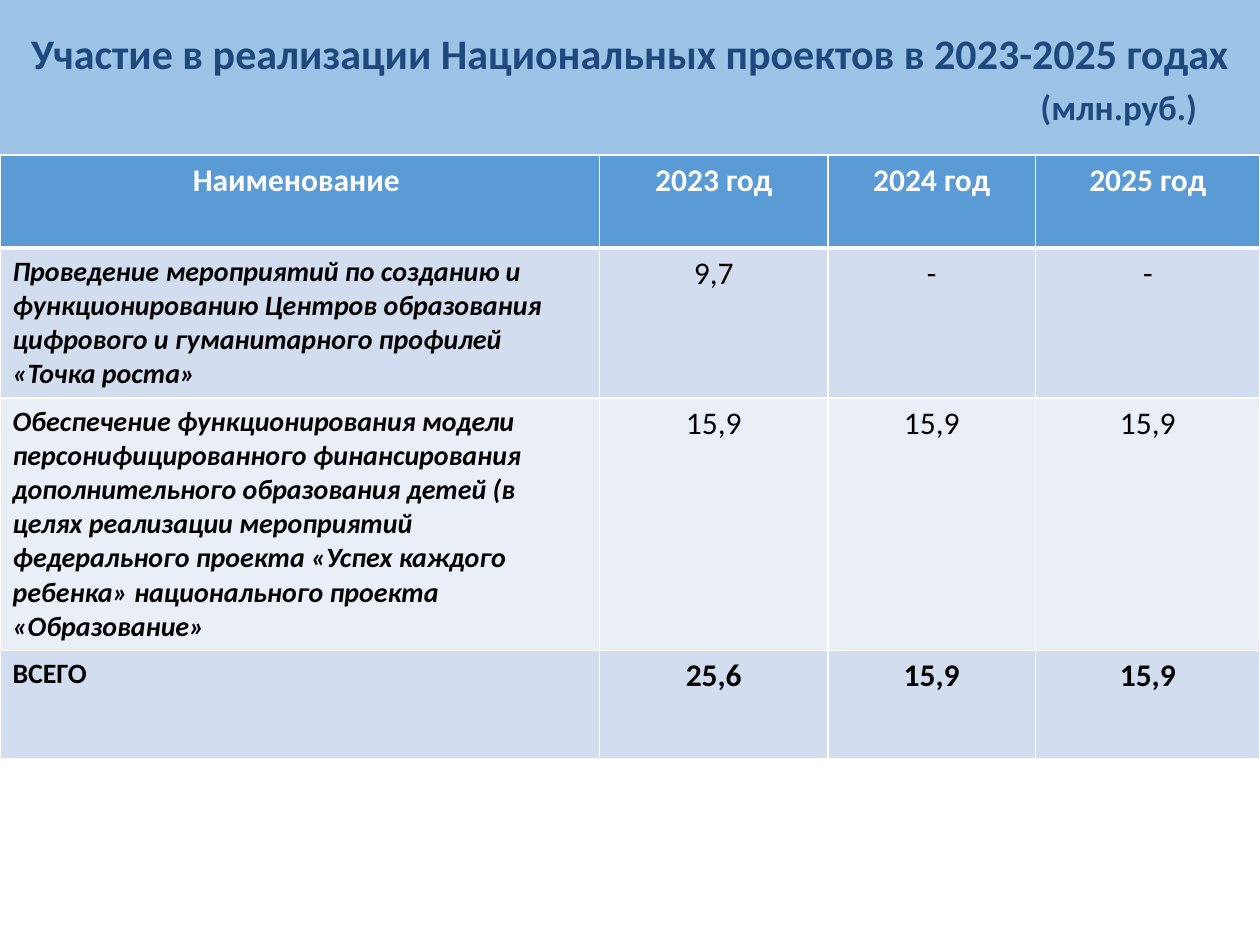
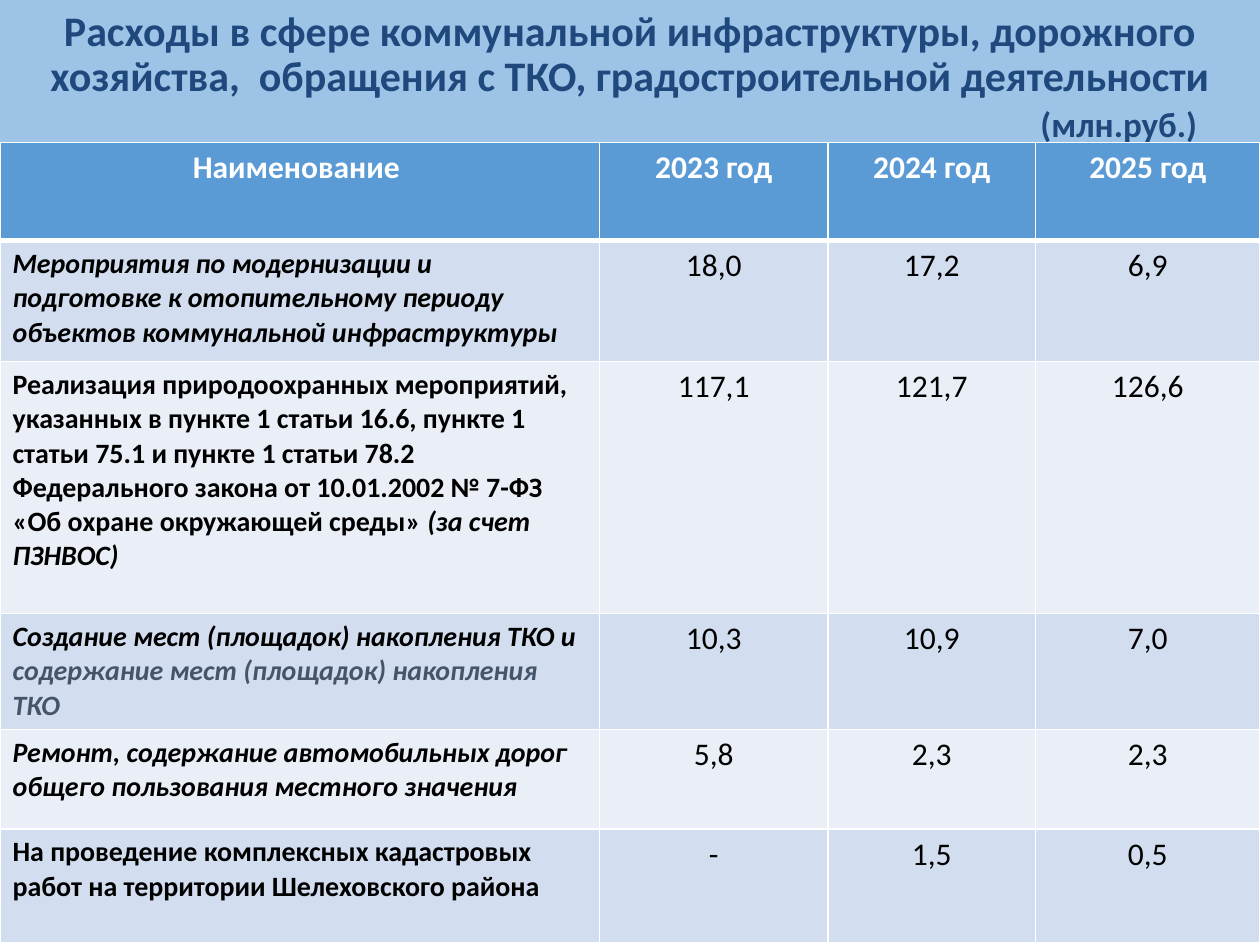
"""Build two budget slides, each with a title band and a table of yearly spending."""
import lxml.etree
import pptx
import pptx.dml.color
import pptx.enum.text
import pptx.oxml.ns
import pptx.util

Inches = pptx.util.Inches
Pt = pptx.util.Pt
RGBColor = pptx.dml.color.RGBColor
PP_ALIGN = pptx.enum.text.PP_ALIGN

BAND_BLUE = RGBColor(0x9D, 0xC3, 0xE6)
TITLE_BLUE = RGBColor(0x1F, 0x49, 0x7D)
HEADER_BLUE = RGBColor(0x5B, 0x9B, 0xD5)
ROW_FILLS = (RGBColor(0xD2, 0xDE, 0xEF), RGBColor(0xEA, 0xEF, 0xF7))
WHITE = RGBColor(0xFF, 0xFF, 0xFF)
BLACK = RGBColor(0, 0, 0)
SLATE = RGBColor(0x44, 0x54, 0x6A)

BASE = {"name": "Calibri", "size": Pt(16), "bold": True, "italic": False}
TITLE = BASE | {"size": Pt(24)}
UNIT = BASE | {"size": Pt(20)}
HEADER = BASE | {"size": Pt(18)}
TOTAL = HEADER
VALUE = HEADER | {"bold": False}
LABEL = BASE
ITALIC = BASE | {"italic": True}

UNIT_TEXT = "(млн.руб.)"
HEADINGS = ("Наименование ", "2023 год", "2024 год", "2025 год")
COLUMN_WIDTHS = (4.76, 1.81, 1.65, 1.78)
BAND_HEIGHT = 1.23
UNIT_INDENT = 7.76

SLIDES = [
    {
        "title": "Участие в реализации Национальных проектов в 2023-2025 годах",
        "line_spacing": 1.0,
        "table_top": 1.23,
        "row_heights": (0.74, 1.19, 2.0, 0.86),
        "rows": [
            ([[("Проведение мероприятий по созданию и функционированию Центров образования "
                "цифрового и гуманитарного профилей «Точка роста»", ITALIC, BLACK)]],
             ("9,7", "-", "-"), VALUE),
            ([[("Обеспечение функционирования модели персонифицированного финансирования "
                "дополнительного образования детей (в целях реализации мероприятий "
                "федерального проекта «Успех каждого ребенка» национального проекта "
                "«Образование»", ITALIC, BLACK)]],
             ("15,9", "15,9", "15,9"), VALUE),
            ([[("ВСЕГО", LABEL, BLACK)]], ("25,6", "15,9", "15,9"), TOTAL),
        ],
    },
    {
        "title": "Расходы в сфере коммунальной инфраструктуры, дорожного хозяйства,  "
                 "обращения с ТКО, градостроительной деятельности",
        "line_spacing": 0.9,
        "table_top": 1.13,
        "row_heights": (0.78, 0.96, 2.0, 0.92, 0.79, 0.9),
        "rows": [
            ([[("Мероприятия по модернизации и подготовке к отопительному периоду "
                "объектов коммунальной инфраструктуры", ITALIC, BLACK)]],
             ("18,0", "17,2", "6,9"), VALUE),
            ([[("Реализация природоохранных мероприятий, указанных в пункте 1 статьи 16.6, "
                "пункте 1 статьи 75.1 и пункте 1 статьи 78.2 Федерального закона от "
                "10.01.2002 № 7-ФЗ «Об охране окружающей среды» ", LABEL, BLACK),
               ("(за счет ПЗНВОС)", ITALIC, BLACK)]],
             ("117,1", "121,7", "126,6"), VALUE),
            ([[("Создание мест (площадок) накопления ТКО и", ITALIC, BLACK)],
              [("содержание мест (площадок) накопления ТКО", ITALIC, SLATE)]],
             ("10,3", "10,9", "7,0"), VALUE),
            ([[("Ремонт, содержание автомобильных дорог общего пользования местного "
                "значения", ITALIC, BLACK)]],
             ("5,8", "2,3", "2,3"), VALUE),
            ([[("На проведение комплексных кадастровых работ на территории Шелеховского "
                "района", LABEL, BLACK)]],
             ("-", "1,5", "0,5"), VALUE),
        ],
    },
]


def set_attributes(target, values):
    """Set each named value on the target."""
    for name, value in values.items():
        setattr(target, name, value)


def write_paragraphs(text_frame, paragraphs, alignment):
    """Fill a text frame with paragraphs of (text, format, colour) runs."""
    for index, runs in enumerate(paragraphs):
        paragraph = text_frame.add_paragraph() if index else text_frame.paragraphs[0]
        paragraph.alignment = alignment
        for text, font_format, colour in runs:
            run = paragraph.add_run()
            run.text = text
            set_attributes(run.font, font_format)
            run.font.color.rgb = colour


def add_title_band(slide, content):
    """Turn the title placeholder into the blue band across the top."""
    band = slide.shapes.title
    set_attributes(band, {"left": 0, "top": 0, "width": Inches(10),
                          "height": Inches(BAND_HEIGHT)})
    band.fill.solid()
    band.fill.fore_color.rgb = BAND_BLUE
    text_frame = band.text_frame
    set_attributes(text_frame, {"word_wrap": True,
                                "auto_size": pptx.enum.text.MSO_AUTO_SIZE.NONE,
                                "vertical_anchor": pptx.enum.text.MSO_ANCHOR.MIDDLE})
    write_paragraphs(text_frame, [[(content["title"], TITLE, TITLE_BLUE)],
                                  [(UNIT_TEXT, UNIT, TITLE_BLUE)]], PP_ALIGN.CENTER)
    for paragraph in text_frame.paragraphs:
        paragraph.line_spacing = content["line_spacing"]
    unit = text_frame.paragraphs[1]
    unit.space_before = Pt(4)
    properties = unit._p.get_or_add_pPr()
    properties.set("marL", str(Inches(UNIT_INDENT)))
    properties.set("indent", "0")


def format_cell(cell, fill, top_width, bottom_width):
    """Give a cell white borders and a solid fill."""
    properties = cell._tc.get_or_add_tcPr()
    for side, width in (("L", 1), ("R", 1), ("T", top_width), ("B", bottom_width)):
        line = lxml.etree.SubElement(properties, pptx.oxml.ns.qn(f"a:ln{side}"),
                                     w=str(Pt(width)))
        solid = lxml.etree.SubElement(line, pptx.oxml.ns.qn("a:solidFill"))
        lxml.etree.SubElement(solid, pptx.oxml.ns.qn("a:srgbClr"), val=str(WHITE))
    cell.fill.solid()
    cell.fill.fore_color.rgb = fill


def add_spending_table(slide, content):
    """Add the table of yearly spending."""
    heights = content["row_heights"]
    table = slide.shapes.add_table(
        len(heights), len(HEADINGS), 0, Inches(content["table_top"]),
        Inches(sum(COLUMN_WIDTHS)), Inches(sum(heights))).table
    for column, width in zip(table.columns, COLUMN_WIDTHS):
        column.width = Inches(width)
    for row, height in zip(table.rows, heights):
        row.height = Inches(height)

    grid = [[[[(heading, HEADER, WHITE)]] for heading in HEADINGS]]
    for label, values, value_format in content["rows"]:
        grid.append([label] + [[[(value, value_format, BLACK)]] for value in values])
    for row_index, row in enumerate(grid):
        fill = ROW_FILLS[(row_index - 1) % 2] if row_index else HEADER_BLUE
        top_width = 3 if row_index == 1 else 1
        bottom_width = 1 if row_index else 3
        for column_index, paragraphs in enumerate(row):
            cell = table.cell(row_index, column_index)
            is_label = row_index and not column_index
            write_paragraphs(cell.text_frame, paragraphs,
                             PP_ALIGN.LEFT if is_label else PP_ALIGN.CENTER)
            format_cell(cell, fill, top_width, bottom_width)


def main():
    """Build and save the presentation."""
    presentation = pptx.Presentation()
    presentation.slide_width = Inches(10)
    presentation.slide_height = Inches(7.5)
    for content in SLIDES:
        slide = presentation.slides.add_slide(presentation.slide_layouts[5])
        add_title_band(slide, content)
        add_spending_table(slide, content)
    presentation.save("out.pptx")


if __name__ == "__main__":
    main()
